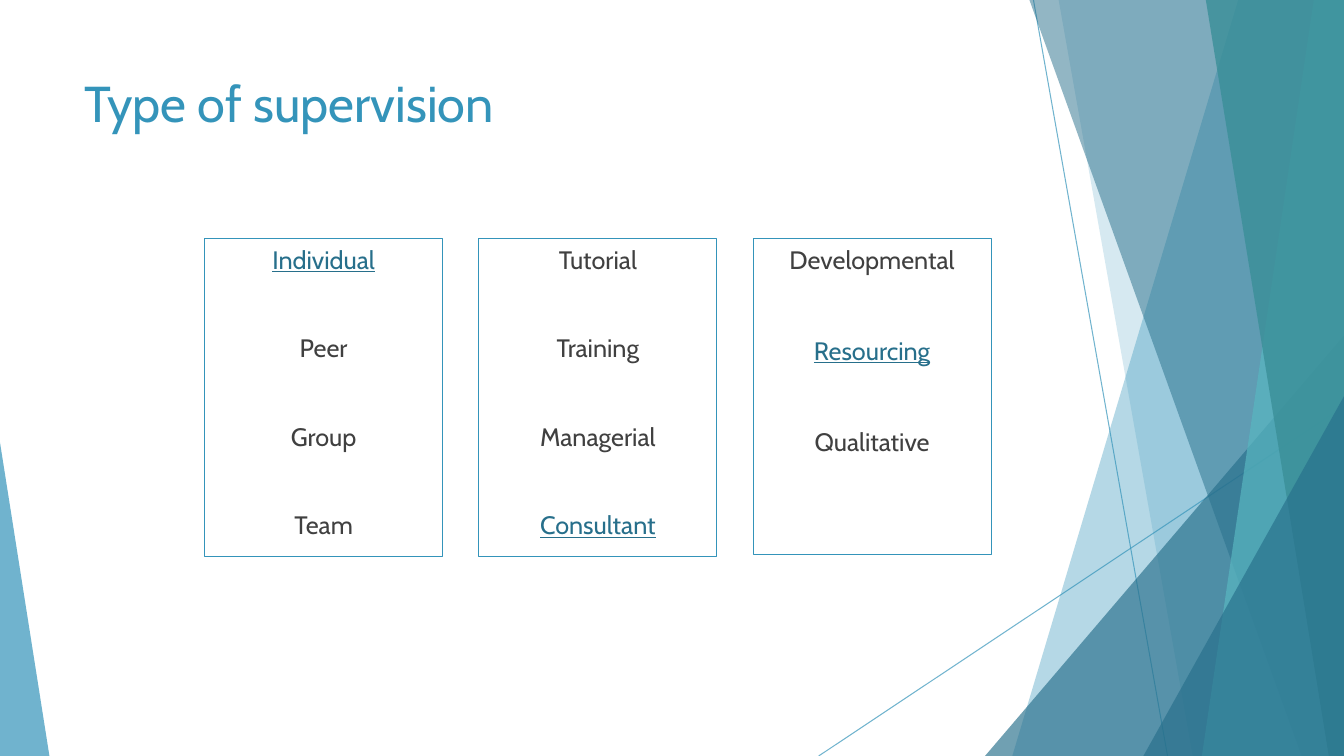
from lxml import etree
from pptx import Presentation
from pptx.dml.color import RGBColor
from pptx.enum import shapes, text
from pptx.oxml.ns import qn
from pptx.util import Inches, Pt

WIDTH, HEIGHT = 13.33, 7.5
BLUE, DARK_BLUE, AQUA, TEAL, GREY = "3494BA", "276F8B", "58B6C0", "3A8F98", "404040"


def paint(fill, colour, owner=None, opacity=100):
    """Make a fill solid; owner is the shape whose colour gets the opacity in percent."""
    fill.solid()
    fill.fore_color.rgb = RGBColor.from_string(colour)
    if opacity < 100:
        for node in owner.element.iter(qn("a:srgbClr")):
            etree.SubElement(node, qn("a:alpha"), val=str(opacity * 1000))


def add_run(para, wording, size, colour, underline=False):
    span = para.add_run()
    span.text = wording
    span.font.name = "Cabin"
    span.font.size = Pt(size)
    span.font.underline = underline
    span.font.color.rgb = RGBColor.from_string(colour)


deck = Presentation()
deck.slide_width, deck.slide_height = Inches(WIDTH), Inches(HEIGHT)
page = deck.slides.add_slide(deck.slide_layouts[1])
title, middle_body = page.placeholders

# Thin crossing lines
for ends in [(10.25, 0, 11.58, HEIGHT), (WIDTH, 4.03, 8.12, HEIGHT)]:
    line = page.shapes.add_connector(shapes.MSO_CONNECTOR.STRAIGHT, *map(Inches, ends))
    line.line.width = Pt(0.75)
    paint(line.line.fill, BLUE, line, 70)
    etree.SubElement(line.element.spPr, qn("a:effectLst"))

# Bands reach the right edge: (top x, bottom x); triangles: (left, top, width, height, tip)
facets = [
    ((12.28, 10.04), BLUE, 36),
    ((10.5, 11.83), BLUE, 20),
    ((9.77, 3.33, 3.56, 4.17, 1), DARK_BLUE, 66),
    ((10.21, 12.91), DARK_BLUE, 50),
    ((13.03, 11.92), AQUA, 70),
    ((11.96, 13.18), TEAL, 80),
    ((11.34, 3.93, 1.99, 3.57, 1), DARK_BLUE, 66),
    ((0, 4.39, 0.49, 3.11, 0), BLUE, 70),
]
for geometry, colour, opacity in facets:
    if len(geometry) == 2:
        top_x, bottom_x = geometry
        outline = page.shapes.build_freeform(Inches(top_x), 0)
        corners = [(WIDTH, 0), (WIDTH, HEIGHT), (bottom_x, HEIGHT)]
        outline.add_line_segments([(Inches(x), Inches(y)) for x, y in corners])
        facet = outline.convert_to_shape()
    else:
        *frame, tip = geometry
        facet = page.shapes.add_shape(shapes.MSO_SHAPE.ISOSCELES_TRIANGLE, *map(Inches, frame))
        facet.adjustments[0] = tip
    facet.shadow.inherit = False
    facet.line.fill.background()
    paint(facet.fill, colour, facet, opacity)

# Title and middle list stand in front of the facets
for holder in (title, middle_body):
    holder.element.getparent().append(holder.element)

title.left, title.top, title.width, title.height = map(Inches, (0.74, 0.67, 9.4, 1.2))
title.text_frame.vertical_anchor = text.MSO_ANCHOR.TOP
title.text_frame.auto_size = text.MSO_AUTO_SIZE.NONE
heading = title.text_frame.paragraphs[0]
heading.alignment = text.PP_ALIGN.LEFT
add_run(heading, "Type of supervision", 36, BLUE)

# Three boxed lists: words, underlined word, box height, gap between words in points
columns = [
    (["Individual", "Peer", "Group", "Team"], "Individual", 3.15, 41.7),
    (["Tutorial", "Training", "Managerial", "Consultant"], "Consultant", 3.15, 41.7),
    (["Developmental", "Resourcing", "Qualitative"], "Resourcing", 3.13, 43.4),
]
for index, (words, marked, height, gap) in enumerate(columns):
    frame = [Inches(n) for n in (2.03 + 2.72 * index, 2.37, 2.36, height)]
    if index == 1:
        box = middle_body
        box.left, box.top, box.width, box.height = frame
    else:
        box = page.shapes.add_textbox(*frame)
    box.line.width = Pt(0.75)
    paint(box.line.fill, BLUE)
    body = box.text_frame
    body.word_wrap = True
    body.auto_size = text.MSO_AUTO_SIZE.NONE
    body.vertical_anchor = text.MSO_ANCHOR.TOP
    for row, word in enumerate(words):
        para = body.add_paragraph() if row else body.paragraphs[0]
        para.alignment = text.PP_ALIGN.CENTER
        para.space_before = Pt(gap if row else 0)
        properties = para._p.get_or_add_pPr()
        properties.set("marL", "0")
        properties.set("indent", "0")
        etree.SubElement(properties, qn("a:buNone"))
        chosen = word == marked
        add_run(para, word, 18, DARK_BLUE if chosen else GREY, chosen)

deck.save("out.pptx")
